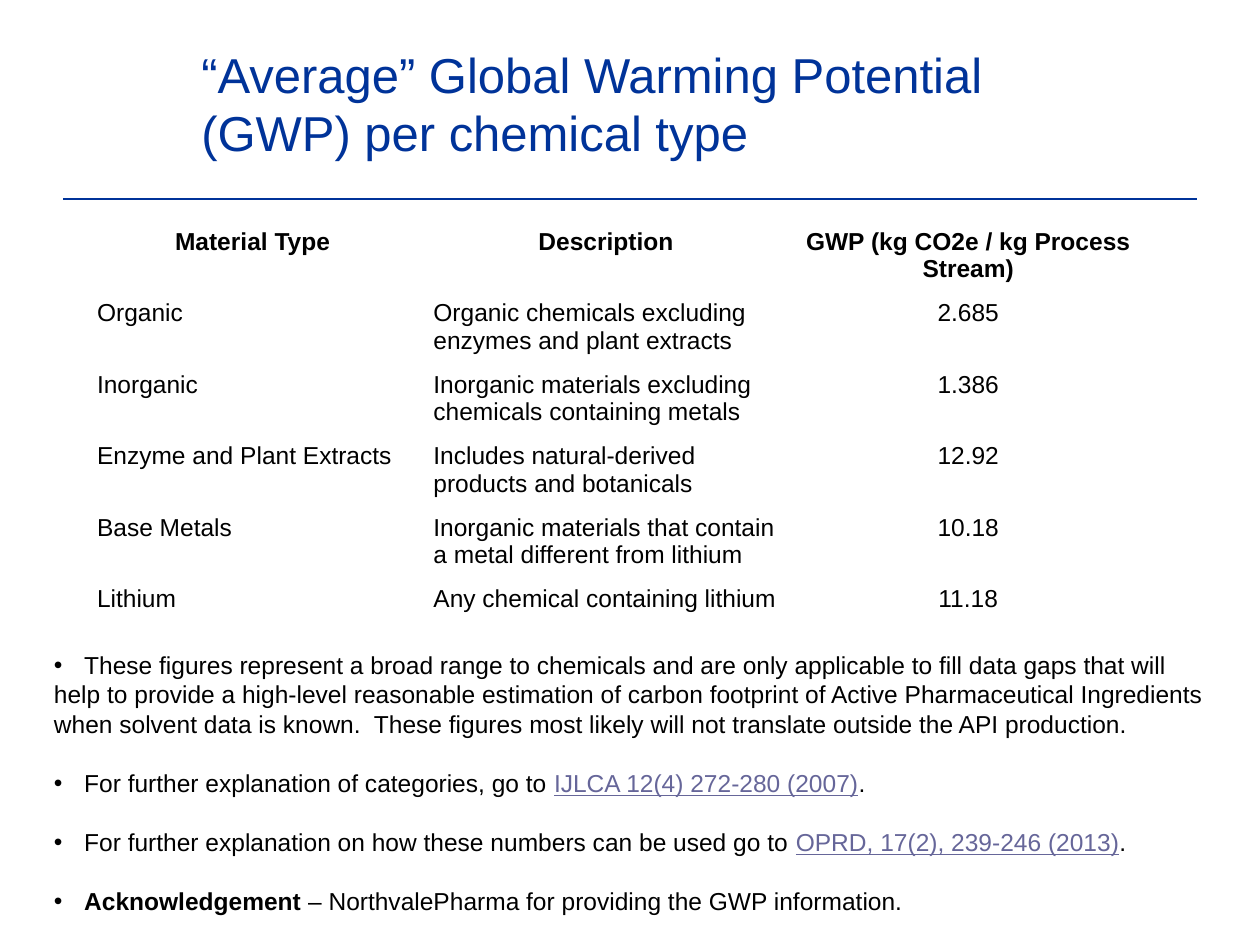
from dataclasses import dataclass

from lxml import etree
from pptx import Presentation
from pptx.dml.color import RGBColor
from pptx.enum.shapes import MSO_CONNECTOR
from pptx.enum.text import PP_ALIGN
from pptx.oxml.ns import qn
from pptx.util import Inches, Pt

STRAIGHT = MSO_CONNECTOR.STRAIGHT
LEFT, CENTER = PP_ALIGN.LEFT, PP_ALIGN.CENTER


@dataclass(frozen=True)
class Theme:
    font: str = "Arial"
    navy: RGBColor = RGBColor(0x00, 0x33, 0x99)
    black: RGBColor = RGBColor(0, 0, 0)
    citation: RGBColor = RGBColor(0x66, 0x66, 0x99)
    title_size: Pt = Pt(28)
    body_size: Pt = Pt(14)


THEME = Theme()


def write(paragraph, text, size=THEME.body_size, color=THEME.black,
          bold=False, underline=False, align=LEFT):
    paragraph.alignment = align
    run = paragraph.add_run()
    run.text = text
    run.font.name = THEME.font
    run.font.size = size
    run.font.color.rgb = color
    run.font.bold = bold
    run.font.underline = underline


def add_bullet(paragraph, indent):
    properties = paragraph._p.get_or_add_pPr()
    properties.set("marL", str(indent))
    properties.set("indent", str(-indent))
    etree.SubElement(properties, qn("a:buFont"), typeface=THEME.font)
    etree.SubElement(properties, qn("a:buChar"), char="•")


prs = Presentation()
prs.slide_width, prs.slide_height = Inches(10), Inches(7.5)
slide = prs.slides.add_slide(prs.slide_layouts[6])

# Title and rule
rule = slide.shapes.add_connector(
    STRAIGHT, Inches(0.5), Inches(1.58), Inches(9.5), Inches(1.58))
rule.line.color.rgb = THEME.navy
rule.line.width = Pt(1.5)
etree.SubElement(rule._element.spPr, qn("a:effectLst"))

title = slide.shapes.add_textbox(
    Inches(1.5), Inches(0.25), Inches(6.68), Inches(1.55)).text_frame
title.word_wrap = True
title.margin_top = title.margin_bottom = Inches(0.1)
write(title.paragraphs[0],
      "“Average” Global Warming Potential (GWP) per chemical type",
      size=THEME.title_size, color=THEME.navy)

# Warming potential by material
materials = [
    ("Material Type", "Description", "GWP (kg CO2e / kg Process Stream)"),
    ("Organic", "Organic chemicals excluding enzymes and plant extracts", "2.685"),
    ("Inorganic", "Inorganic materials excluding chemicals containing metals", "1.386"),
    ("Enzyme and Plant Extracts", "Includes natural-derived products and botanicals", "12.92"),
    ("Base Metals", "Inorganic materials that contain a metal different from lithium", "10.18"),
    ("Lithium", "Any chemical containing lithium", "11.18"),
]
column_widths = [2.67, 2.94, 2.81]
row_height = Inches(0.41)
gwp_table = slide.shapes.add_table(
    len(materials), len(column_widths), Inches(0.67), Inches(1.76),
    Inches(sum(column_widths)), row_height * len(materials)).table
gwp_table.first_row = gwp_table.horz_banding = False
for column, width in zip(gwp_table.columns, column_widths):
    column.width = Inches(width)
for r, material in enumerate(materials):
    gwp_table.rows[r].height = row_height
    for c, text in enumerate(material):
        cell = gwp_table.cell(r, c)
        cell.fill.background()
        is_header = r == 0
        write(cell.text_frame.paragraphs[0], text, bold=is_header,
              align=CENTER if is_header or c == 2 else LEFT)

# Notes under the table: (bulleted, runs)
cited = {"color": THEME.citation, "underline": True}
remarks = [
    (True, [("These figures represent a broad range to chemicals and are only "
             "applicable to fill data gaps that will", {})]),
    (False, [("help to provide a high-level reasonable estimation of carbon "
              "footprint of Active Pharmaceutical Ingredients", {})]),
    (False, [("when solvent data is known.  These figures most likely will not "
              "translate outside the API production.", {})]),
    (True, [("For further explanation of categories, go to ", {}),
            ("IJLCA 12(4) 272-280 (2007)", cited), (".", {})]),
    (True, [("For further explanation on how these numbers can be used go to ", {}),
            ("OPRD, 17(2), 239-246 (2013)", cited), (".", {})]),
    (True, [("Acknowledgement", {"bold": True}),
            (" – NorthvalePharma for providing the GWP information.", {})]),
]
remarks_frame = slide.shapes.add_textbox(
    Inches(0.33), Inches(5.11), Inches(9.43), Inches(2.22)).text_frame
remarks_frame.word_wrap = False
for i, (bulleted, runs) in enumerate(remarks):
    paragraph = remarks_frame.add_paragraph() if i else remarks_frame.paragraphs[0]
    if bulleted:
        if i:
            paragraph.space_before = Pt(17)
        add_bullet(paragraph, Inches(0.24))
    for text, style in runs:
        write(paragraph, text, **style)

prs.save("out.pptx")
